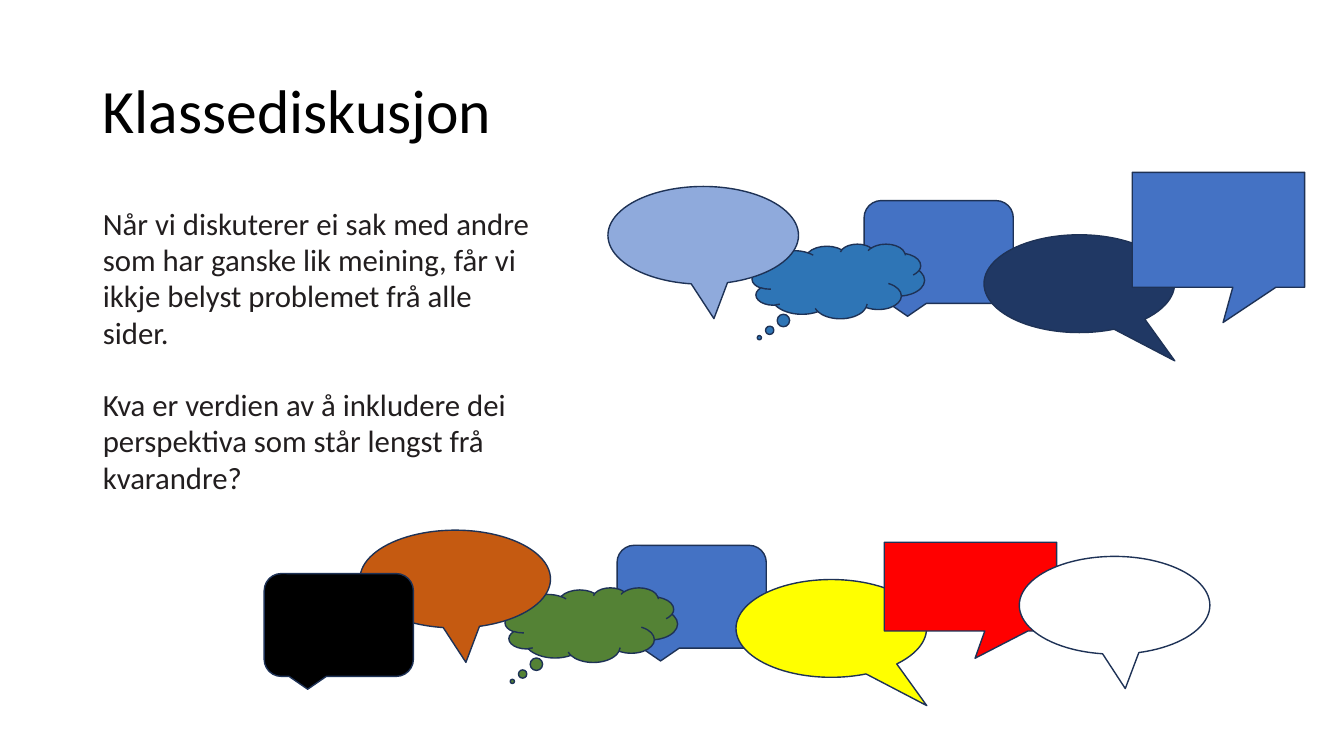
from pptx import Presentation
from pptx import util as u
from pptx.dml.color import RGBColor
from pptx.enum import shapes, text

PX = 9144
COLORS = {
    "black": "000000", "ink": "221E1F", "outline": "1E3256",
    "blue": "4472C4", "navy": "203864", "teal": "2E75B6", "sky": "8FAADC",
    "yellow": "FFFF00", "green": "548235", "red": "FF0000",
    "orange": "C55A11", "white": "FFFFFF",
}
KIND = shapes.MSO_SHAPE
ROUNDED = (KIND.ROUNDED_RECTANGULAR_CALLOUT, 148, 102, ())
OVAL_RIGHT = (KIND.OVAL_CALLOUT, 189, 97, (0.501, 0.789))
OVAL_DOWN = (KIND.OVAL_CALLOUT, 189, 97, (0.056, 0.852))
CLOUD = (KIND.CLOUD_CALLOUT, 171, 74, (-0.458, 0.757))
TALL_BOX = (KIND.RECTANGULAR_CALLOUT, 171, 114, (0.027, 0.807))
LOW_BOX = (KIND.RECTANGULAR_CALLOUT, 171, 88, (0.027, 0.807))


def color(name):
    return RGBColor.from_string(COLORS[name])


def write(paragraph, words, size, ink, line_spacing, before=0):
    properties = paragraph._p.get_or_add_pPr()
    properties.set("marL", "0")
    properties.set("indent", "0")
    paragraph.alignment = text.PP_ALIGN.LEFT
    paragraph.line_spacing = line_spacing
    paragraph.space_before = u.Pt(before)
    properties.insert_element_before(
        properties.makeelement(
            "{http://schemas.openxmlformats.org/drawingml/2006/main}buNone", {}),
        "a:tabLst", "a:defRPr", "a:extLst")
    run = paragraph.add_run()
    run.text = words
    run.font.name = "Calibri"
    run.font.size = u.Pt(size)
    run.font.color.rgb = color(ink)


deck = Presentation()
deck.slide_width, deck.slide_height = 1333 * PX, 750 * PX
slide = deck.slides.add_slide(deck.slide_layouts[1])

heading, discussion = slide.placeholders
for holder, box, anchor in (
    (heading, (92, 40, 1150, 145), text.MSO_ANCHOR.MIDDLE),
    (discussion, (92, 200, 455, 476), text.MSO_ANCHOR.TOP),
):
    holder.left, holder.top, holder.width, holder.height = [n * PX for n in box]
    holder.text_frame.vertical_anchor = anchor
    holder.text_frame.auto_size = text.MSO_AUTO_SIZE.NONE
    holder.text_frame.word_wrap = True

write(heading.text_frame.paragraphs[0], "Klassediskusjon",
      size=44, ink="black", line_spacing=0.9)
write(discussion.text_frame.paragraphs[0],
      "Når vi diskuterer ei sak med andre som har ganske lik meining, "
      "får vi ikkje belyst problemet frå alle sider.",
      size=22, ink="ink", line_spacing=0.98)
write(discussion.text_frame.add_paragraph(),
      "Kva er verdien av å inkludere dei perspektiva som står lengst frå kvarandre?",
      size=22, ink="ink", line_spacing=0.98, before=26)

for (kind, width, height, tail), left, top, fill in (
    (ROUNDED, 857, 199, "blue"),
    (OVAL_RIGHT, 976, 233, "navy"),
    (CLOUD, 746, 242, "teal"),
    (TALL_BOX, 1123, 171, "blue"),
    (OVAL_DOWN, 603, 185, "sky"),
    (ROUNDED, 612, 541, "blue"),
    (OVAL_RIGHT, 730, 575, "yellow"),
    (CLOUD, 501, 583, "green"),
    (LOW_BOX, 877, 538, "red"),
    (OVAL_DOWN, 357, 526, "orange"),
    (ROUNDED, 262, 569, "black"),
    (OVAL_DOWN, 1011, 552, "white"),
):
    bubble = slide.shapes.add_shape(kind, left * PX, top * PX, width * PX, height * PX)
    for index, offset in enumerate(tail):
        bubble.adjustments[index] = offset
    bubble.shadow.inherit = False
    bubble.fill.solid()
    bubble.fill.fore_color.rgb = color(fill)
    bubble.line.color.rgb = color("outline")
    bubble.line.width = u.Pt(1)

deck.save("out.pptx")
